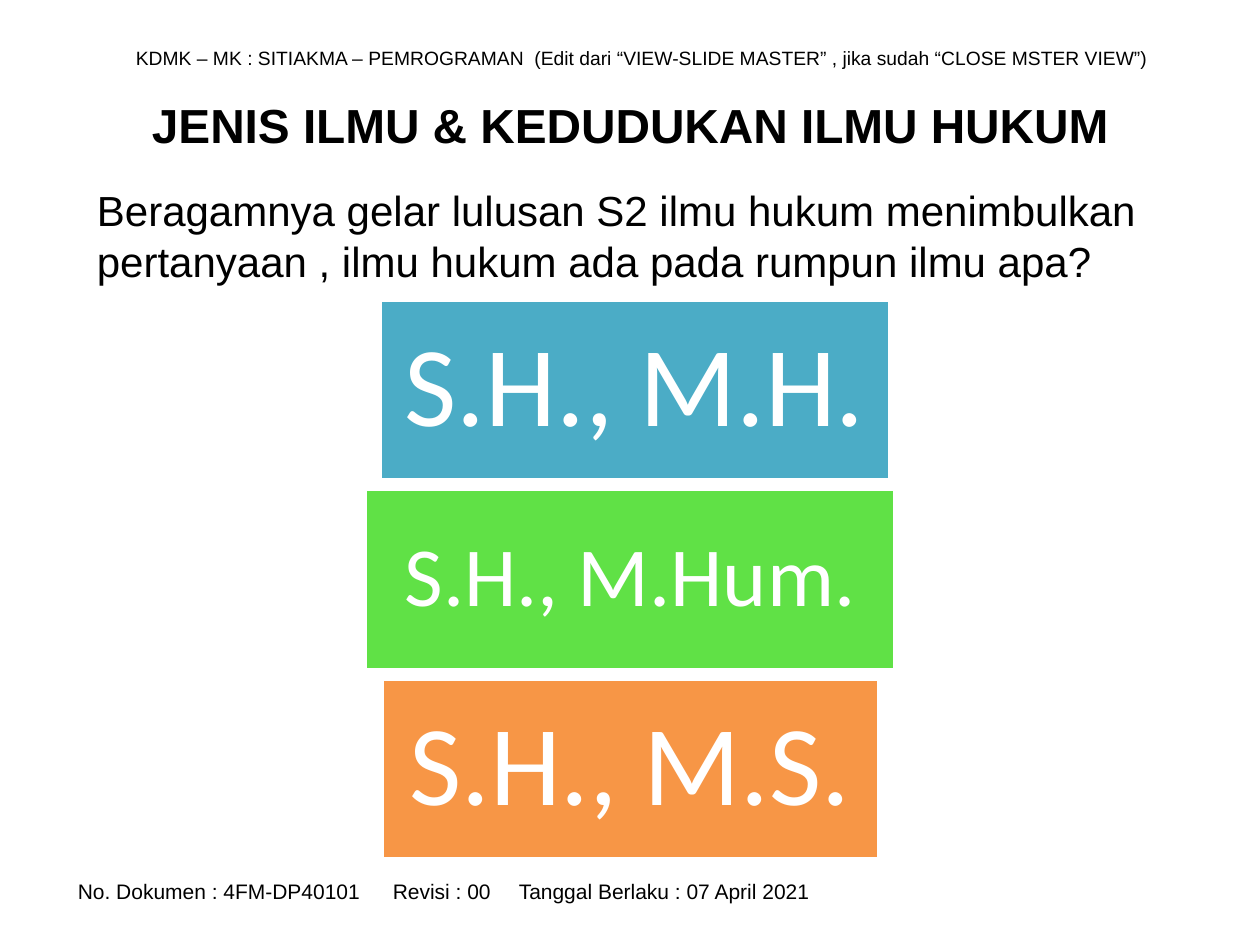
from dataclasses import dataclass

import pptx
import pptx.dml.color
import pptx.enum.shapes
import pptx.enum.text
import pptx.oxml.ns
import pptx.util
from lxml import etree

Cm = pptx.util.Cm
Align = pptx.enum.text.PP_ALIGN
Anchor = pptx.enum.text.MSO_ANCHOR


@dataclass(frozen=True)
class Theme:
    font: str = "Arial"
    degree_font: str = "Calibri"
    ink: str = "000000"
    white: str = "FFFFFF"
    blue: str = "4BACC6"
    green: str = "60E146"
    orange: str = "F79646"
    header_size: float = 11
    footer_size: float = 12
    title_size: float = 27.3
    body_size: float = 24
    degree_size: float = 65
    long_degree_size: float = 48


@dataclass(frozen=True)
class Box:
    left: float
    top: float
    width: float
    height: float


@dataclass(frozen=True)
class Degree:
    label: str
    color: str
    left: float
    width: float
    size: float
    inset: float


THEME = Theme()
DEGREE_TOP, DEGREE_HEIGHT, DEGREE_PITCH = 6.05, 3.63, 3.82
DEGREES = (
    Degree("S.H., M.H.", THEME.blue, 7.67, 10.26, THEME.degree_size, 0.46),
    Degree("S.H., M.Hum.", THEME.green, 7.37, 10.67, THEME.long_degree_size, 0.33),
    Degree("S.H., M.S.", THEME.orange, 7.7, 10.01, THEME.degree_size, 0.46),
)


def rgb(color: str) -> pptx.dml.color.RGBColor:
    return pptx.dml.color.RGBColor.from_string(color)


def place(shape, box: Box) -> None:
    shape.left, shape.top = Cm(box.left), Cm(box.top)
    shape.width, shape.height = Cm(box.width), Cm(box.height)


def write(shape, text: str, *, size: float, font: str = THEME.font,
          color: str = THEME.ink, bold: bool = False, align=Align.LEFT,
          anchor=Anchor.MIDDLE, line_spacing: float = 1.0,
          tabs: tuple[float, ...] = ()) -> None:
    """Fill a shape with one unbulleted paragraph; tabs are in centimetres."""
    frame = shape.text_frame
    frame.word_wrap = True
    frame.auto_size = pptx.enum.text.MSO_AUTO_SIZE.NONE
    frame.vertical_anchor = anchor
    paragraph = frame.paragraphs[0]
    properties = paragraph._p.get_or_add_pPr()
    properties.set("marL", "0")
    properties.set("indent", "0")
    qn = pptx.oxml.ns.qn
    etree.SubElement(properties, qn("a:buNone"))
    if tabs:
        stops = etree.SubElement(properties, qn("a:tabLst"))
        for position in tabs:
            etree.SubElement(stops, qn("a:tab"), pos=str(Cm(position)), algn="l")
    paragraph.alignment = align
    paragraph.line_spacing = line_spacing
    paragraph.space_before = pptx.util.Pt(0)
    run = paragraph.add_run()
    run.text = text
    run.font.name = font
    run.font.size = pptx.util.Pt(size)
    run.font.bold = bold
    run.font.color.rgb = rgb(color)


def add_label(slide, box: Box, text: str, **text_format) -> None:
    label = slide.shapes.add_textbox(0, 0, 0, 0)
    place(label, box)
    write(label, text, **text_format)


def add_degree(slide, degree: Degree, top: float) -> None:
    card = slide.shapes.add_shape(
        pptx.enum.shapes.MSO_SHAPE.RECTANGLE, 0, 0, 0, 0)
    place(card, Box(degree.left, top, degree.width, DEGREE_HEIGHT))
    card.shadow.inherit = False
    card.fill.solid()
    card.fill.fore_color.rgb = rgb(degree.color)
    card.line.color.rgb = rgb(THEME.white)
    card.line.width = pptx.util.Pt(2)
    frame = card.text_frame
    frame.margin_left = frame.margin_right = Cm(degree.inset)
    frame.margin_top = frame.margin_bottom = Cm(degree.inset)
    write(card, degree.label, size=degree.size, font=THEME.degree_font,
          color=THEME.white, align=Align.CENTER, line_spacing=0.9)


def main() -> None:
    deck = pptx.Presentation()
    deck.slide_width, deck.slide_height = Cm(25.4), Cm(19.05)
    slide = deck.slides.add_slide(deck.slide_layouts[1])

    add_label(slide, Box(2.49, 0.79, 21.21, 0.74),
              "KDMK – MK : SITIAKMA – PEMROGRAMAN  (Edit dari “VIEW-SLIDE MASTER” , "
              "jika sudah “CLOSE MSTER VIEW”)", size=THEME.header_size)
    add_label(slide, Box(1.32, 17.58, 23.2, 0.76),
              "No. Dokumen : 4FM-DP40101\tRevisi : 00\tTanggal Berlaku : 07 April 2021",
              size=THEME.footer_size, tabs=(9.22, 15.54))

    title, question = slide.placeholders
    place(title, Box(1.27, 0.91, 22.86, 3.18))
    write(title, "JENIS ILMU & KEDUDUKAN ILMU HUKUM", size=THEME.title_size,
          bold=True, align=Align.CENTER)
    place(question, Box(1.7, 3.6, 22.86, 11.07))
    write(question, "Beragamnya gelar lulusan S2 ilmu hukum menimbulkan pertanyaan , "
          "ilmu hukum ada pada rumpun ilmu apa?", size=THEME.body_size,
          anchor=Anchor.TOP)

    for row, degree in enumerate(DEGREES):
        add_degree(slide, degree, DEGREE_TOP + row * DEGREE_PITCH)

    deck.save("out.pptx")


if __name__ == "__main__":
    main()
